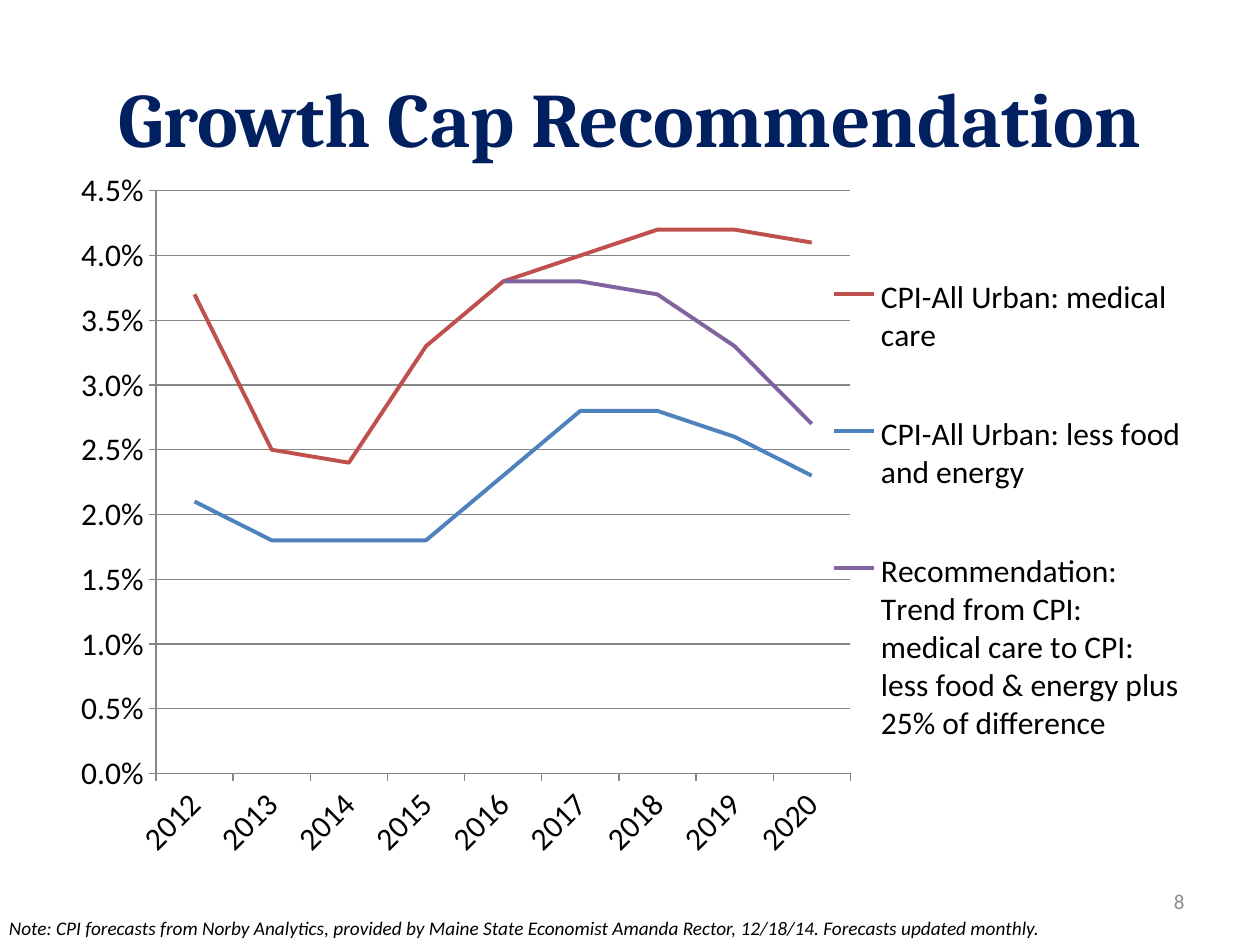
from dataclasses import dataclass

from lxml import etree
from pptx import Presentation
from pptx import util as u
from pptx.chart import data as chart_data
from pptx.dml.color import RGBColor
from pptx.enum import chart as ch, text
from pptx.oxml import ns


@dataclass(frozen=True)
class Theme:
    heading_font: str = "Cambria"
    body_font: str = "Calibri"
    title: str = "002060"
    ink: str = "000000"
    muted: str = "8C8C8C"
    axis: str = "868686"
    title_size: float = 44
    chart_size: float = 18
    number_size: float = 12
    note_size: float = 11
    series_width: float = 2.25
    axis_width: float = 0.75


THEME = Theme()
YEARS = [str(year) for year in range(2012, 2021)]
SERIES = [
    ("CPI-All Urban: medical care", "C0504D",
     [0.037, 0.025, 0.024, 0.033, 0.038, 0.04, 0.042, 0.042, 0.041]),
    ("CPI-All Urban: less food and energy", "4F81BD",
     [0.021, 0.018, 0.018, 0.018, 0.023, 0.028, 0.028, 0.026, 0.023]),
    ("Recommendation: Trend from CPI: medical care to CPI: "
     "less food & energy plus 25% of difference", "8064A2",
     [None] * 4 + [0.038, 0.038, 0.037, 0.033, 0.027]),
]


def style_font(font, size, color, name=THEME.body_font):
    font.name = name
    font.size = u.Pt(size)
    font.color.rgb = RGBColor.from_string(color)


def style_line(line, color, width):
    line.color.rgb = RGBColor.from_string(color)
    line.width = u.Pt(width)


def add_text(slide, words, place, size, color, align,
             anchor=text.MSO_ANCHOR.MIDDLE, name=THEME.body_font):
    """Add a one-paragraph box and return its font."""
    box = slide.shapes.add_textbox(*map(u.Pt, place))
    frame = box.text_frame
    frame.word_wrap = True
    frame.vertical_anchor = anchor
    para = frame.paragraphs[0]
    para.text = words
    para.alignment = align
    style_font(para.font, size, color, name)
    return para.font


def set_layout(element, index, percents, inner=False):
    """Fix a chart part at x, y, w, h, given in percent of the chart."""
    for old in element.findall(ns.qn("c:layout")):
        element.remove(old)
    layout = etree.Element(ns.qn("c:layout"))
    manual = etree.SubElement(layout, ns.qn("c:manualLayout"))
    settings = [("layoutTarget", "inner")] if inner else []
    settings += [("xMode", "edge"), ("yMode", "edge")]
    settings += [(side, percent / 100) for side, percent in zip("xywh", percents)]
    for tag, value in settings:
        etree.SubElement(manual, ns.qn(f"c:{tag}")).set("val", str(value))
    element.insert(index, layout)


def style_axes(chart):
    for axis in (chart.category_axis, chart.value_axis):
        axis.major_tick_mark = ch.XL_TICK_MARK.OUTSIDE
        axis.minor_tick_mark = ch.XL_TICK_MARK.NONE
        style_line(axis.format.line, THEME.axis, THEME.axis_width)
        style_font(axis.tick_labels.font, THEME.chart_size, THEME.ink)
    years, rates = chart.category_axis, chart.value_axis
    years.has_major_gridlines = False
    years._element.find(f".//{ns.qn('a:bodyPr')}").set("rot", "-2700000")
    rates.has_major_gridlines = True
    style_line(rates.major_gridlines.format.line, THEME.axis, THEME.axis_width)
    rates.minimum_scale, rates.maximum_scale, rates.major_unit = 0, 0.045, 0.005
    rates.tick_labels.number_format = "0.0%"
    rates.tick_labels.number_format_is_linked = False


def add_line_chart(slide, place):
    rates = chart_data.CategoryChartData(number_format="0.0%")
    rates.categories = YEARS
    for name, _, values in SERIES:
        rates.add_series(name, values)
    chart = slide.shapes.add_chart(
        ch.XL_CHART_TYPE.LINE, *map(u.Pt, place), rates).chart
    style_font(chart.font, THEME.chart_size, THEME.ink)
    chart.has_title = False
    chart.plots[0].vary_by_categories = False
    for series, (_, color, _) in zip(chart.plots[0].series, SERIES):
        series.smooth = False
        series.marker.style = ch.XL_MARKER_STYLE.NONE
        style_line(series.format.line, color, THEME.series_width)
    style_axes(chart)
    chart.has_legend = True
    legend = chart.legend
    legend.position = ch.XL_LEGEND_POSITION.RIGHT
    legend.include_in_layout = False
    style_font(legend.font, THEME.chart_size, THEME.ink)
    set_layout(legend._element, 1, (69.8, 7, 30.2, 82))
    plot_area = chart._chartSpace.find(f".//{ns.qn('c:plotArea')}")
    set_layout(plot_area, 0, (9, 3.2, 60.4, 81.6), inner=True)


def main():
    deck = Presentation()
    deck.slide_width, deck.slide_height = u.Pt(720), u.Pt(540)
    slide = deck.slides.add_slide(deck.slide_layouts[6])
    add_line_chart(slide, (30, 96, 657, 408))
    title = add_text(slide, "Growth Cap Recommendation", (36, 21.6, 648, 90),
                     THEME.title_size, THEME.title, text.PP_ALIGN.CENTER,
                     name=THEME.heading_font)
    title.bold = True
    note = add_text(
        slide,
        "Note: CPI forecasts from Norby Analytics, provided by Maine State "
        "Economist Amanda Rector, 12/18/14. Forecasts updated monthly.",
        (-2, 520, 690, 20.6), THEME.note_size, THEME.ink,
        text.PP_ALIGN.LEFT, text.MSO_ANCHOR.TOP)
    note.italic = True
    add_text(slide, "8", (516, 500.5, 168, 28.8), THEME.number_size,
             THEME.muted, text.PP_ALIGN.RIGHT)
    deck.save("out.pptx")


if __name__ == "__main__":
    main()
